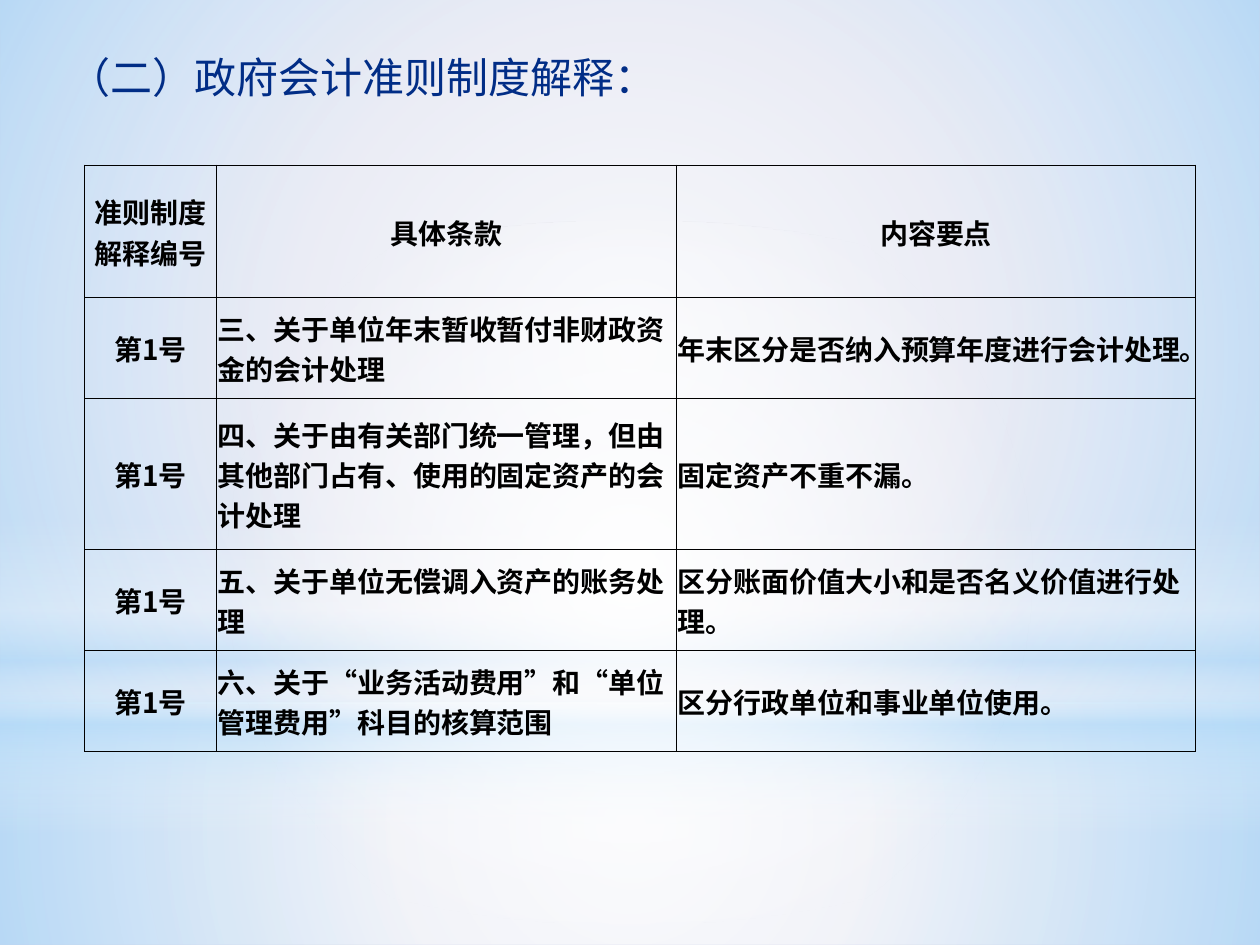
import pptx
import pptx.util
import pptx.dml.color
import pptx.enum.shapes
import pptx.enum.text
import pptx.oxml
import pptx.oxml.ns

Inches = pptx.util.Inches
Pt = pptx.util.Pt
SHAPE = pptx.enum.shapes.MSO_SHAPE
ALIGN = pptx.enum.text.PP_ALIGN
ANCHOR = pptx.enum.text.MSO_ANCHOR

COLORS = {"back": "C8CDE5", "white": "FFFFFF", "sky": "B4DCFA",
          "title": "012D86", "ink": "000000"}
FONT = "Noto Sans CJK SC"
CIRCLE = ('<a:path path="circle"><a:fillToRect l="50000" t="50000" '
          'r="50000" b="50000"/></a:path>')
DOWN = '<a:lin ang="5400000" scaled="0"/>'


def rgb(name):
    return pptx.dml.color.RGBColor.from_string(COLORS[name])


def make(tag, inner, attrs=""):
    return pptx.oxml.parse_xml(
        f'<a:{tag} {pptx.oxml.ns.nsdecls("a")} {attrs}>{inner}</a:{tag}>')


def write(frame, text, size=16, color="ink", bold=False, align=ALIGN.LEFT):
    """Fill a text frame with one paragraph; a vertical tab breaks the line."""
    para = frame.paragraphs[0]
    para.text = text
    para.alignment = align
    for run in para.runs:
        font = run.font
        font.name, font.size, font.bold = FONT, Pt(size), bold
        font.color.rgb = rgb(color)
        latin = run._r.rPr.find(pptx.oxml.ns.qn("a:latin"))
        latin.addnext(make("ea", "", f'typeface="{FONT}"'))


class Deck:
    def __init__(self):
        self.prs = pptx.Presentation()
        self.prs.slide_width, self.prs.slide_height = Inches(10), Inches(7.5)
        self.slide = self.prs.slides.add_slide(self.prs.slide_layouts[5])
        fill = self.slide.background.fill
        fill.solid()
        fill.fore_color.rgb = rgb("back")

    def glow(self, kind, top, height, stops, shade):
        """Add a full-width shape whose stops are (place, color, opacity)."""
        shape = self.slide.shapes.add_shape(
            kind, 0, Inches(top), Inches(10), Inches(height))
        shape.shadow.inherit = False
        shape.line.fill.background()
        marks = "".join(
            f'<a:gs pos="{pos * 1000}"><a:srgbClr val="{COLORS[color]}">'
            f'<a:alpha val="{alpha * 1000}"/></a:srgbClr></a:gs>'
            for pos, color, alpha in stops)
        grad = make("gradFill", f"<a:gsLst>{marks}</a:gsLst>{shade}",
                    'rotWithShape="1"')
        shape._element.spPr.find(pptx.oxml.ns.qn("a:prstGeom")).addnext(grad)

    def title(self, text, left, top, width, height):
        shape = self.slide.shapes.title
        self.slide.shapes._spTree.append(shape._element)  # bring to front
        shape.left, shape.top = Inches(left), Inches(top)
        shape.width, shape.height = Inches(width), Inches(height)
        frame = shape.text_frame
        frame.word_wrap = True
        frame.auto_size = pptx.enum.text.MSO_AUTO_SIZE.NONE
        frame.vertical_anchor = ANCHOR.MIDDLE
        write(frame, text, size=24, color="title")

    def border(self, cell):
        line = (f'<a:solidFill><a:srgbClr val="{COLORS["ink"]}"/></a:solidFill>'
                '<a:prstDash val="solid"/>')
        for spot, side in enumerate("LRTB"):
            cell._tc.get_or_add_tcPr().insert(
                spot, make("ln" + side, line, f'w="{Pt(0.5)}"'))

    def table(self, left, top, cols, rows, data):
        grid = self.slide.shapes.add_table(
            len(rows), len(cols), Inches(left), Inches(top),
            Inches(sum(cols)), Inches(sum(rows))).table
        grid.first_row = grid.horz_banding = False
        for col, width in zip(grid.columns, cols):
            col.width = Inches(width)
        for row, height in zip(grid.rows, rows):
            row.height = Inches(height)
        for r, texts in enumerate(data):
            for c, text in enumerate(texts):
                cell = grid.cell(r, c)
                cell.fill.background()
                self.border(cell)
                cell.vertical_anchor = ANCHOR.MIDDLE
                cell.margin_left = cell.margin_right = Inches(0.01)
                cell.margin_top, cell.margin_bottom = Inches(0.01), 0
                mid = r == 0 or c == 0
                write(cell.text_frame, text, bold=True,
                      align=ALIGN.CENTER if mid else ALIGN.LEFT)


HEAD = ("准则制度\v解释编号", "具体条款", "内容要点")
ITEMS = [
    ("三、关于单位年末暂收暂付非财政资金的会计处理",
     "年末区分是否纳入预算年度进行会计处理。"),
    ("四、关于由有关部门统一管理，但由其他部门占有、使用的固定资产的会计处理",
     "固定资产不重不漏。"),
    ("五、关于单位无偿调入资产的账务处理",
     "区分账面价值大小和是否名义价值进行处理。"),
    ("六、关于“业务活动费用”和“单位管理费用”科目的核算范围",
     "区分行政单位和事业单位使用。"),
]


def main():
    deck = Deck()
    deck.glow(SHAPE.RECTANGLE, 5.58, 1.92,
              [(0, "white", 91), (37, "white", 76), (100, "sky", 79)], CIRCLE)
    deck.glow(SHAPE.RECTANGLE, 0, 5.58,
              [(0, "white", 89), (48, "white", 62), (100, "sky", 79)], CIRCLE)
    deck.glow(SHAPE.RECTANGLE, 4.12, 2.5,
              [(0, "white", 0), (29, "white", 30), (45, "sky", 40),
               (55, "white", 26), (65, "sky", 60), (100, "white", 0)], DOWN)
    deck.glow(SHAPE.OVAL, 1.75, 5.58,
              [(0, "white", 100), (56, "white", 0)], CIRCLE)
    deck.table(0.67, 1.31, [1.05, 3.65, 4.12], [1.05, 0.8, 1.2, 0.8, 0.8],
               [HEAD] + [("第1号",) + item for item in ITEMS])
    deck.title("（二）政府会计准则制度解释：", 0.44, 0.36, 5.58, 0.5)
    deck.prs.save("out.pptx")


if __name__ == "__main__":
    main()
